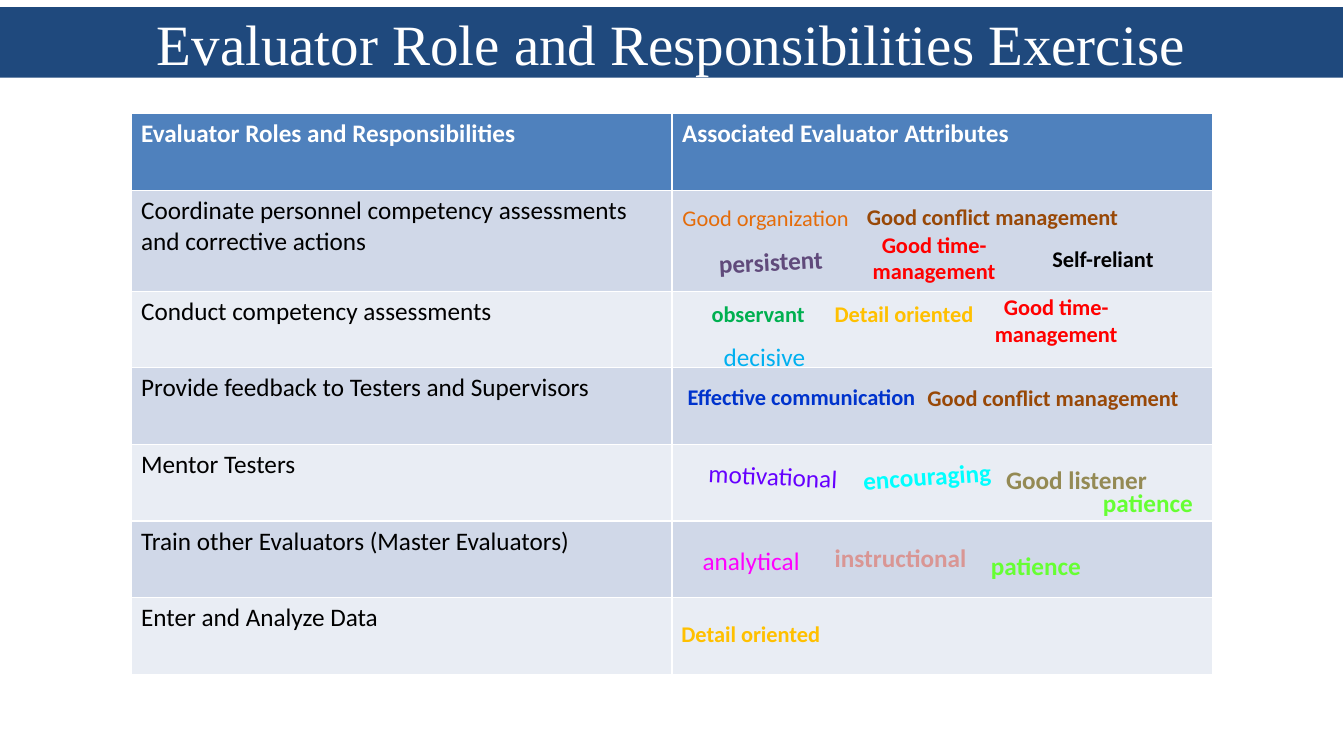
from pptx import Presentation
from pptx.dml.color import RGBColor
from pptx.enum.text import MSO_ANCHOR, MSO_AUTO_SIZE, PP_ALIGN
from pptx.util import Emu, Pt

PX = 9144
HUES = {
    "navy": "1F497D", "head": "4F81BD", "odd": "D0D8E8", "even": "E9EDF4",
    "white": "FFFFFF", "black": "000000", "red": "FF0000", "green": "00B050",
    "blue": "0033CC", "orange": "E46C0A", "brown": "984807", "sky": "00B0F0",
    "plum": "604A7B", "pink": "FF00FF", "gold": "FFC000", "lime": "66FF33",
    "khaki": "948A54", "rose": "D99694", "violet": "6600FF", "cyan": "00FFFF",
}
ROLES = [
    ("Evaluator Roles and Responsibilities", "Associated Evaluator Attributes"),
    ("Coordinate personnel competency assessments and corrective actions", ""),
    ("Conduct competency assessments", ""),
    ("Provide feedback to Testers and Supervisors", ""),
    ("Mentor Testers", ""),
    ("Train other Evaluators (Master Evaluators)", ""),
    ("Enter and Analyze Data", ""),
]
TRAITS = {
    "Good time-management": ("red", 16, True, 191, 64, True, [(952, 286, 0), (831, 224, 0)]),
    "observant": ("green", 16, True, 130, 37, False, [(696, 293, 0)]),
    "Self-reliant": ("black", 16, True, 123, 37, False, [(1034, 238, 0)]),
    "Effective communication": ("blue", 16, True, 256, 37, True, [(667, 375, 0)]),
    "Good organization": ("orange", 16, False, 189, 37, False, [(667, 198, 0)]),
    "Good conflict management": ("brown", 16, True, 276, 37, False, [(910, 376, 0), (850, 197, 0)]),
    "decisive": ("sky", 18, False, 123, 40, False, [(708, 334, 0)]),
    "persistent": ("plum", 18, True, 135, 40, False, [(703, 239, 357.1)]),
    "analytical": ("pink", 18, False, 123, 40, False, [(687, 536, 0)]),
    "Detail oriented": ("gold", 16, True, 184, 37, False, [(818, 293, 0), (666, 610, 0)]),
    "patience": ("lime", 18, True, 111, 40, False, [(1084, 479, 0), (973, 541, 0)]),
    "Good listener": ("khaki", 18, True, 168, 40, False, [(988, 456, 0)]),
    "instructional": ("rose", 18, True, 169, 40, False, [(818, 533, 0)]),
    "motivational": ("violet", 18, False, 156, 40, False, [(693, 452, 2.7)]),
    "encouraging": ("cyan", 18, True, 153, 40, False, [(846, 452, 355.8)]),
}


class Deck:
    font = "Calibri"

    def __init__(self, wide, high):
        self.file = Presentation()
        self.file.slide_width = Emu(wide * PX)
        self.file.slide_height = Emu(high * PX)
        self.slide = self.file.slides.add_slide(self.file.slide_layouts[5])

    def hue(self, name):
        return RGBColor.from_string(HUES[name])

    def paint(self, part, name):
        part.fill.solid()
        part.fill.fore_color.rgb = self.hue(name)

    def letter(self, frame, text, hue, size, bold=False, mid=False, font=None):
        frame.text = text
        for para in frame.paragraphs:
            para.alignment = PP_ALIGN.CENTER if mid else PP_ALIGN.LEFT
            para.font.size = Pt(size)
            for run in para.runs:
                run.font.name = font or self.font
                run.font.size = Pt(size)
                run.font.bold = bold
                run.font.color.rgb = self.hue(hue)

    def title(self, text, box):
        shape = self.slide.shapes.title
        shape.left, shape.top, shape.width, shape.height = [Emu(n * PX) for n in box]
        self.paint(shape, "navy")
        frame = shape.text_frame
        frame.word_wrap = True
        frame.auto_size = MSO_AUTO_SIZE.NONE
        frame.vertical_anchor = MSO_ANCHOR.MIDDLE
        self.letter(frame, text, "white", 40.7, mid=True, font="Times New Roman")

    def table(self, rows, box, highs):
        left, top, wide, high = [Emu(n * PX) for n in box]
        grid = self.slide.shapes.add_table(len(rows), len(rows[0]), left, top, wide, high).table
        for r, row in enumerate(rows):
            grid.rows[r].height = Emu(highs[r] * PX)
            fill = "head" if r == 0 else ("odd" if r % 2 else "even")
            for c, text in enumerate(row):
                cell = grid.cell(r, c)
                self.paint(cell, fill)
                self.letter(cell.text_frame, text, "black" if r else "white", 18, r == 0)

    def label(self, text, box, turn, hue, size, bold, mid):
        shape = self.slide.shapes.add_textbox(*[Emu(n * PX) for n in box])
        shape.rotation = turn
        frame = shape.text_frame
        frame.word_wrap = True
        frame.auto_size = MSO_AUTO_SIZE.SHAPE_TO_FIT_TEXT
        self.letter(frame, text, hue, size, bold, mid)


def main():
    deck = Deck(1333, 750)
    deck.title("Evaluator Role and Responsibilities Exercise", (-1, 7, 1333, 70))
    deck.table(ROLES, (130, 113, 1073, 556), [76, 100] + [76] * 5)
    for text, (hue, size, bold, wide, high, mid, spots) in TRAITS.items():
        for left, top, turn in spots:
            deck.label(text, (left, top, wide, high), turn, hue, size, bold, mid)
    deck.file.save("out.pptx")


if __name__ == "__main__":
    main()
